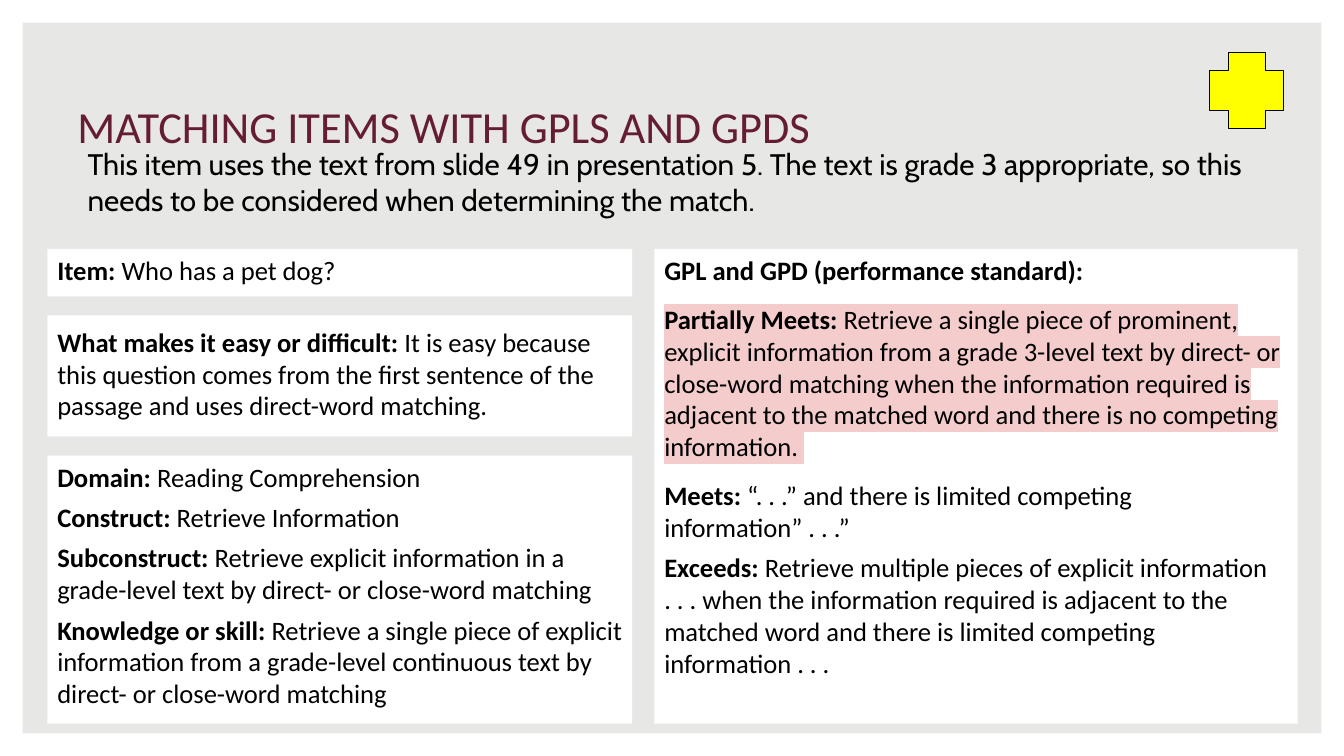
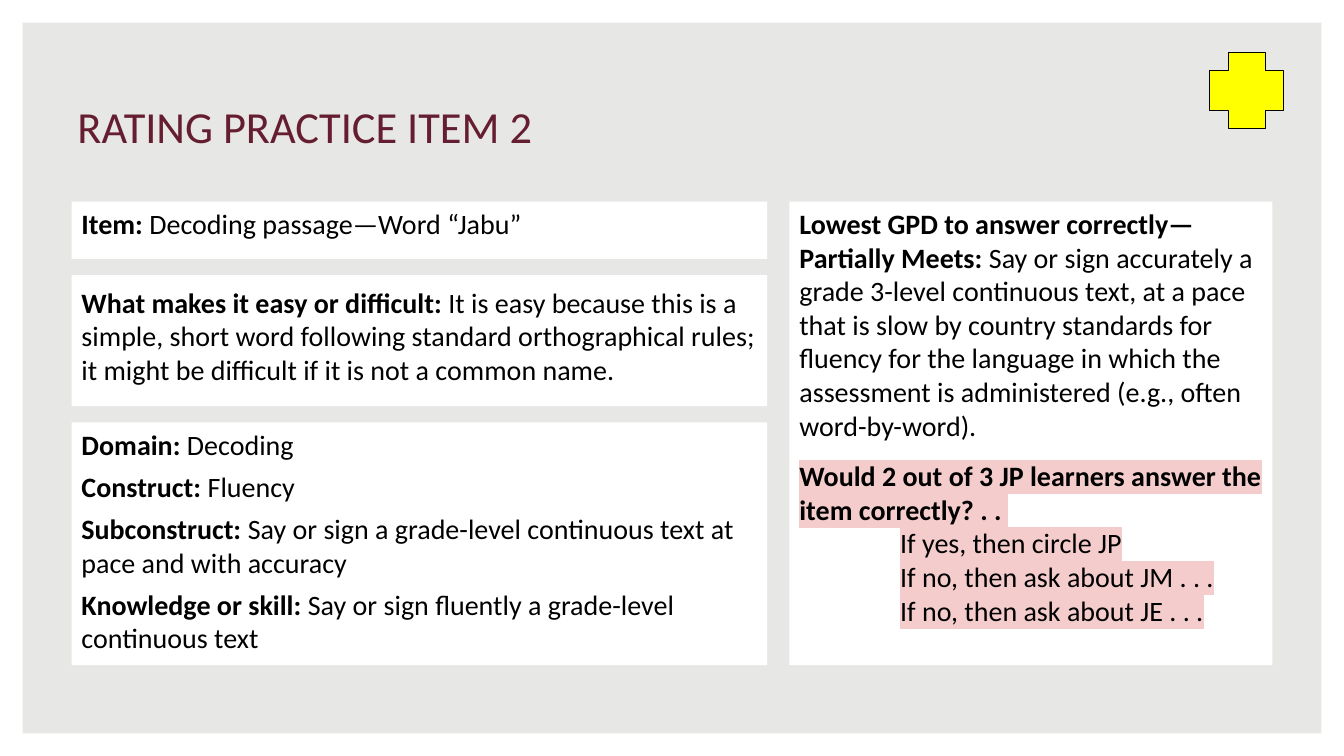
from dataclasses import dataclass
from typing import Optional

from lxml.etree import SubElement
from pptx import Presentation
from pptx.dml.color import RGBColor
from pptx.enum.shapes import MSO_SHAPE as SHAPE
from pptx.enum.text import MSO_ANCHOR as ANCHOR
from pptx.oxml.ns import qn
from pptx.util import Pt

PX = 9144  # EMU per px, 100 px to the inch
SLIDE_W, SLIDE_H = 1333, 750
COLUMN_GAP = 22
PAD_X, PAD_Y = 10, 5
COLORS = {
    "background": "E7E7E5",
    "panel": "FFFFFF",
    "title": "651D32",
    "text": "000000",
    "marker": "FFFF00",
    "highlight": "F4CCCC",
}


@dataclass
class Para:
    label: str = ""
    text: str = ""
    before: int = 0
    indent: int = 0
    marked: bool = False


@dataclass
class Card:
    height: int
    paras: list[Para]
    pad_y: int = PAD_Y


@dataclass
class Content:
    title: str
    left: int
    top: int
    left_width: int
    right_width: int
    row_gap: int
    size: int
    cards: list[Card]
    standard: list[Para]
    intro: Optional[str] = None


def rgb(name: str) -> RGBColor:
    return RGBColor.from_string(COLORS[name])


# Text
def format_run(r, size: float, color: str = "text", font: str = "Calibri",
               bold: bool = False, marked: bool = False) -> None:
    r.font.size = Pt(size)
    r.font.bold = bold
    r.font.color.rgb = rgb(color)
    if marked:  # the highlight must come before the typeface
        mark = SubElement(r.font._element, qn("a:highlight"))
        SubElement(mark, qn("a:srgbClr")).set("val", COLORS["highlight"])
    r.font.name = font


def set_frame(tf, anchor=ANCHOR.TOP, pad_y: int = PAD_Y) -> None:
    tf.word_wrap = True
    tf.vertical_anchor = anchor
    tf.margin_left = tf.margin_right = PAD_X * PX
    tf.margin_top = tf.margin_bottom = pad_y * PX


def write_paras(tf, paras: list[Para], size: float) -> None:
    for i, para in enumerate(paras):
        p = tf.paragraphs[0] if i == 0 else tf.add_paragraph()
        p.alignment = 1
        p.space_before = Pt(para.before)
        if para.indent:
            p._p.get_or_add_pPr().set("marL", str(para.indent * PX))
        if para.label:
            r = p.add_run()
            r.text = para.label
            format_run(r, size, bold=True, marked=para.marked)
        for n, line in enumerate(para.text.split("\n") if para.text else []):
            if n:
                p.add_line_break()
            r = p.add_run()
            r.text = line
            format_run(r, size, marked=para.marked)


def add_text(s, x: int, y: int, w: int, h: int, text: str, size: float,
             color: str, font: str, anchor=ANCHOR.TOP, indent: int = 0) -> None:
    tf = s.shapes.add_textbox(x * PX, y * PX, w * PX, h * PX).text_frame
    set_frame(tf, anchor)
    tf.text = text
    p = tf.paragraphs[0]
    if indent:
        p._p.get_or_add_pPr().set("marL", str(indent * PX))
    format_run(p.runs[0], size, color, font)


# Shapes
def add_block(s, kind, x: int, y: int, w: int, h: int, fill: str,
              line: Optional[str] = None):
    sp = s.shapes.add_shape(kind, x * PX, y * PX, w * PX, h * PX)
    sp.shadow.inherit = False
    sp.fill.solid()
    sp.fill.fore_color.rgb = rgb(fill)
    if line:
        sp.line.color.rgb = rgb(line)
        sp.line.width = Pt(0.75)
    else:
        sp.line.fill.background()
    return sp


def add_card(s, x: int, y: int, w: int, card: Card, size: int) -> None:
    sp = add_block(s, SHAPE.RECTANGLE, x, y, w, card.height, "panel")
    set_frame(sp.text_frame, pad_y=card.pad_y)
    write_paras(sp.text_frame, card.paras, size)


# Slide
def add_slide(prs, c: Content) -> None:
    s = prs.slides.add_slide(prs.slide_layouts[6])
    s.background.fill.solid()
    s.background.fill.fore_color.rgb = rgb("background")

    # Border, title and corner marker
    border = add_block(s, SHAPE.FRAME, 0, 0, SLIDE_W, SLIDE_H, "panel")
    border.adjustments[0] = 0.03
    add_text(s, 67, 92, 1189, 64, c.title, 31.7, "title", "Calibri", ANCHOR.BOTTOM)
    if c.intro:
        add_text(s, 67, 140, 1189, 85, c.intro, 21.2, "text", "Cabin", indent=10)
    plus = add_block(s, SHAPE.CROSS, 1200, 52, 73, 76, "marker", "text")
    plus.adjustments[0] = 0.25

    # Item cards on the left, performance standard on the right
    y = c.top
    for card in c.cards:
        add_card(s, c.left, y, c.left_width, card, c.size)
        y += card.height + c.row_gap
    standard = Card(y - c.row_gap - c.top, c.standard)
    add_card(s, c.left + c.left_width + COLUMN_GAP, c.top, c.right_width,
             standard, c.size)


def item_cards(heights: tuple[int, int, int], item: str, difficulty: str,
               domain: str, construct: str, subconstruct: str,
               skill: str) -> list[Card]:
    return [
        Card(heights[0], [Para("Item: ", item)]),
        Card(heights[1], [Para("What makes it easy or difficult: ", difficulty)],
             pad_y=10),
        Card(heights[2], [
            Para("Domain: ", domain),
            Para("Construct: ", construct, 6),
            Para("Subconstruct: ", subconstruct, 6),
            Para("Knowledge or skill: ", skill, 6),
        ]),
    ]


SLIDES = [
    Content(
        title="MATCHING ITEMS WITH GPLS AND GPDS",
        intro="This item uses the text from slide 49 in presentation 5. The text is "
              "grade 3 appropriate, so this needs to be considered when determining "
              "the match.",
        left=47, top=247, left_width=580, right_width=638, row_gap=19, size=19,
        cards=item_cards(
            (47, 120, 266),
            "Who has a pet dog?",
            "It is easy because this question comes from the first sentence of the "
            "passage and uses direct-word matching.",
            "Reading Comprehension",
            "Retrieve Information",
            "Retrieve explicit information in a grade-level text by direct- or "
            "close-word matching",
            "Retrieve a single piece of explicit information from a grade-level "
            "continuous text by direct- or close-word matching",
        ),
        standard=[
            Para("GPL and GPD (performance standard):"),
            Para("Partially Meets: ",
                 "Retrieve a single piece of prominent, explicit information from a "
                 "grade 3-level text by direct- or close-word matching when the "
                 "information required is adjacent to the matched word and there is "
                 "no competing information. ", 12, marked=True),
            Para("Meets: ", "“. . .” and there is limited competing information” "
                 ". . .”", 12),
            Para("Exceeds: ",
                 "Retrieve multiple pieces of explicit information \n. . . when the "
                 "information required is adjacent to the matched word and there is "
                 "limited competing information . . .", 6),
        ],
    ),
    Content(
        title="RATING PRACTICE ITEM 2",
        left=71, top=200, left_width=690, right_width=479, row_gap=16, size=20,
        cards=item_cards(
            (57, 130, 241),
            "Decoding passage—Word “Jabu”",
            "It is easy because this is a simple, short word following standard "
            "orthographical rules; it might be difficult if it is not a common name.",
            "Decoding",
            "Fluency",
            "Say or sign a grade-level continuous text at pace and with accuracy",
            "Say or sign fluently a grade-level continuous text",
        ),
        standard=[
            Para("Lowest GPD to answer correctly—Partially Meets: ",
                 "Say or sign accurately a grade 3-level continuous text, at a pace "
                 "that is slow by country standards for fluency for the language in "
                 "which the assessment is administered (e.g., often word-by-word)."),
            Para("Would 2 out of 3 JP learners answer the item correctly? . . ",
                 before=12, marked=True),
            *(Para(text=answer, indent=100, marked=True) for answer in (
                "If yes, then circle JP",
                "If no, then ask about JM . . .",
                "If no, then ask about JE . . .",
            )),
        ],
    ),
]


def main() -> None:
    prs = Presentation()
    prs.slide_width, prs.slide_height = SLIDE_W * PX, SLIDE_H * PX
    for content in SLIDES:
        add_slide(prs, content)
    prs.save("out.pptx")


if __name__ == "__main__":
    main()
